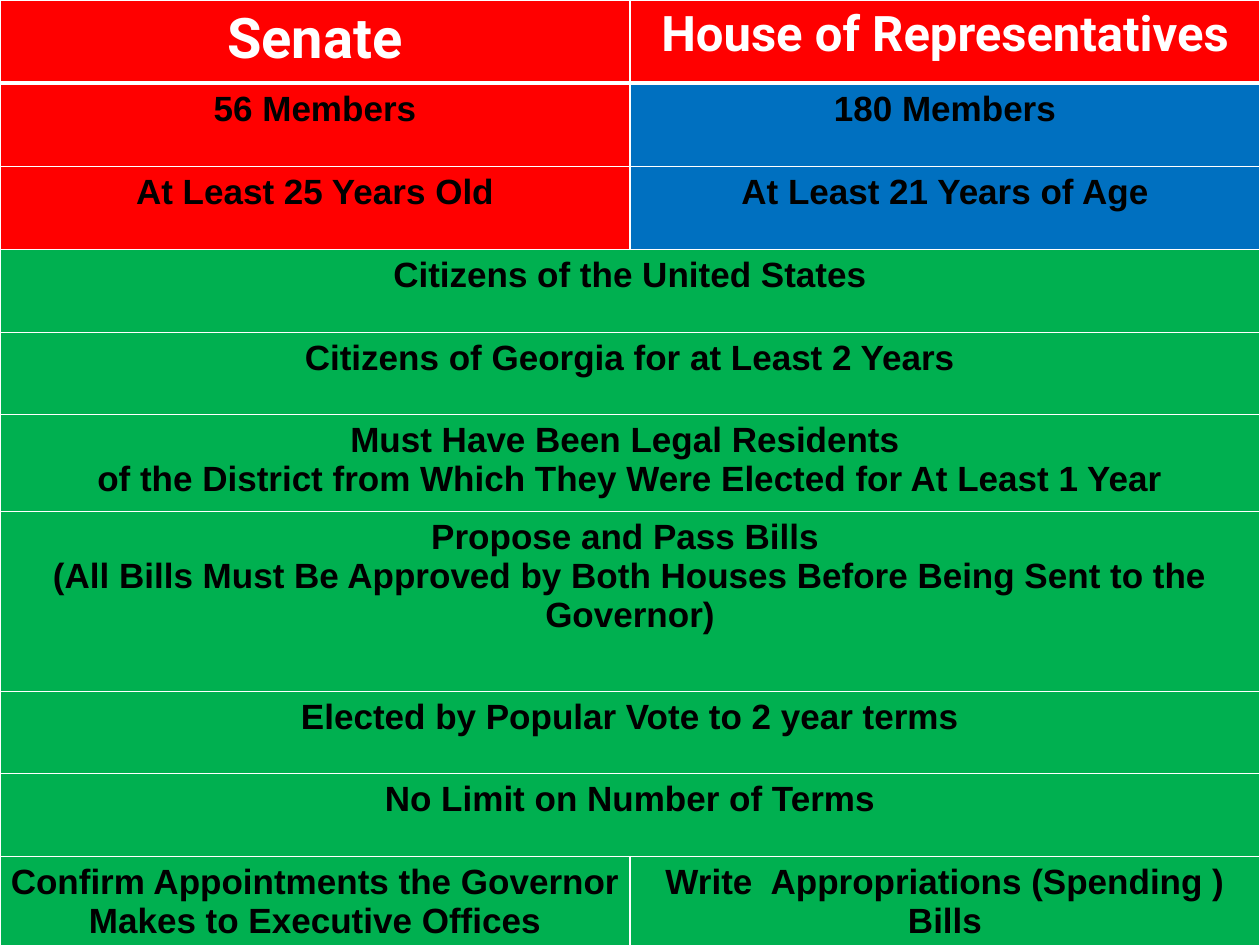
from lxml import etree
from pptx import Presentation
from pptx.dml.color import RGBColor
from pptx.enum.text import PP_ALIGN
from pptx.oxml.ns import qn
from pptx.util import Inches, Pt

CENTER = PP_ALIGN.CENTER
COLORS = {"red": "FF0000", "blue": "0070C0", "green": "00B050",
          "white": "FFFFFF", "black": "000000"}

# Row height, then one (text, fill) per cell; a single cell spans both columns
ROWS = [
    (0.66, [("Senate", "red"), ("House of Representatives", "red")]),
    (0.66, [("56 Members", "red"), ("180 Members", "blue")]),
    (0.66, [("At Least 25 Years Old", "red"), ("At Least 21 Years of Age", "blue")]),
    (0.66, [("Citizens of the United States", "green")]),
    (0.65, [("Citizens of Georgia for at Least 2 Years", "green")]),
    (0.77, [("Must Have Been Legal Residents \n"
             "of the District from Which They Were Elected for At Least 1 Year", "green")]),
    (1.43, [("Propose and Pass Bills \n"
             "(All Bills Must Be Approved by Both Houses Before Being Sent to the Governor)",
             "green")]),
    (0.65, [("Elected by Popular Vote to 2 year terms", "green")]),
    (0.66, [("No Limit on Number of Terms", "green")]),
    (0.7, [("Confirm Appointments the Governor Makes to Executive Offices", "green"),
           ("Write  Appropriations (Spending ) Bills", "green")]),
]
HEADER_SIZES = [32, 28]


def write(tf, text, size=20, font="Arial", color="black"):
    """Fill a text frame with bold centred text, one paragraph per line."""
    for i, line in enumerate(text.split("\n")):
        p = tf.paragraphs[0] if i == 0 else tf.add_paragraph()
        p.alignment = CENTER
        r = p.add_run()
        r.text = line
        r.font.size = Pt(size)
        r.font.name = font
        r.font.bold = True
        r.font.color.rgb = RGBColor.from_string(COLORS[color])


def set_borders(cell, widths):
    """Draw white borders; widths are points for left, right, top and bottom."""
    tcPr = cell._tc.get_or_add_tcPr()
    for i, (side, width) in enumerate(zip("LRTB", widths)):
        ln = etree.Element(qn(f"a:ln{side}"), w=str(Pt(width)))
        fill = etree.SubElement(ln, qn("a:solidFill"))
        etree.SubElement(fill, qn("a:srgbClr"), val=COLORS["white"])
        tcPr.insert(i, ln)  # borders come before the fill


prs = Presentation()
prs.slide_width, prs.slide_height = Inches(10), Inches(7.5)
s = prs.slides.add_slide(prs.slide_layouts[6])

total = sum(height for height, _ in ROWS)
table = s.shapes.add_table(len(ROWS), 2, 0, 0, Inches(10), Inches(total)).table
table.horz_banding = False
for col in table.columns:
    col.width = Inches(5)

for i, (height, cells) in enumerate(ROWS):
    table.rows[i].height = Inches(height)
    if len(cells) == 1:
        table.cell(i, 0).merge(table.cell(i, 1))
    for j in range(2):
        cell = table.cell(i, j)
        cell.margin_left = cell.margin_right = 0
        cell.margin_top = cell.margin_bottom = Inches(0.05)
        text, fill = cells[min(j, len(cells) - 1)]
        cell.fill.solid()
        cell.fill.fore_color.rgb = RGBColor.from_string(COLORS[fill])
        set_borders(cell, (1, 1, 3 if i == 1 else 1, 3 if i == 0 else 1))
        if i == 0:
            write(cell.text_frame, text, size=HEADER_SIZES[j], font="Roboto", color="white")
        elif not cell.is_spanned:
            write(cell.text_frame, text)

prs.save("out.pptx")
